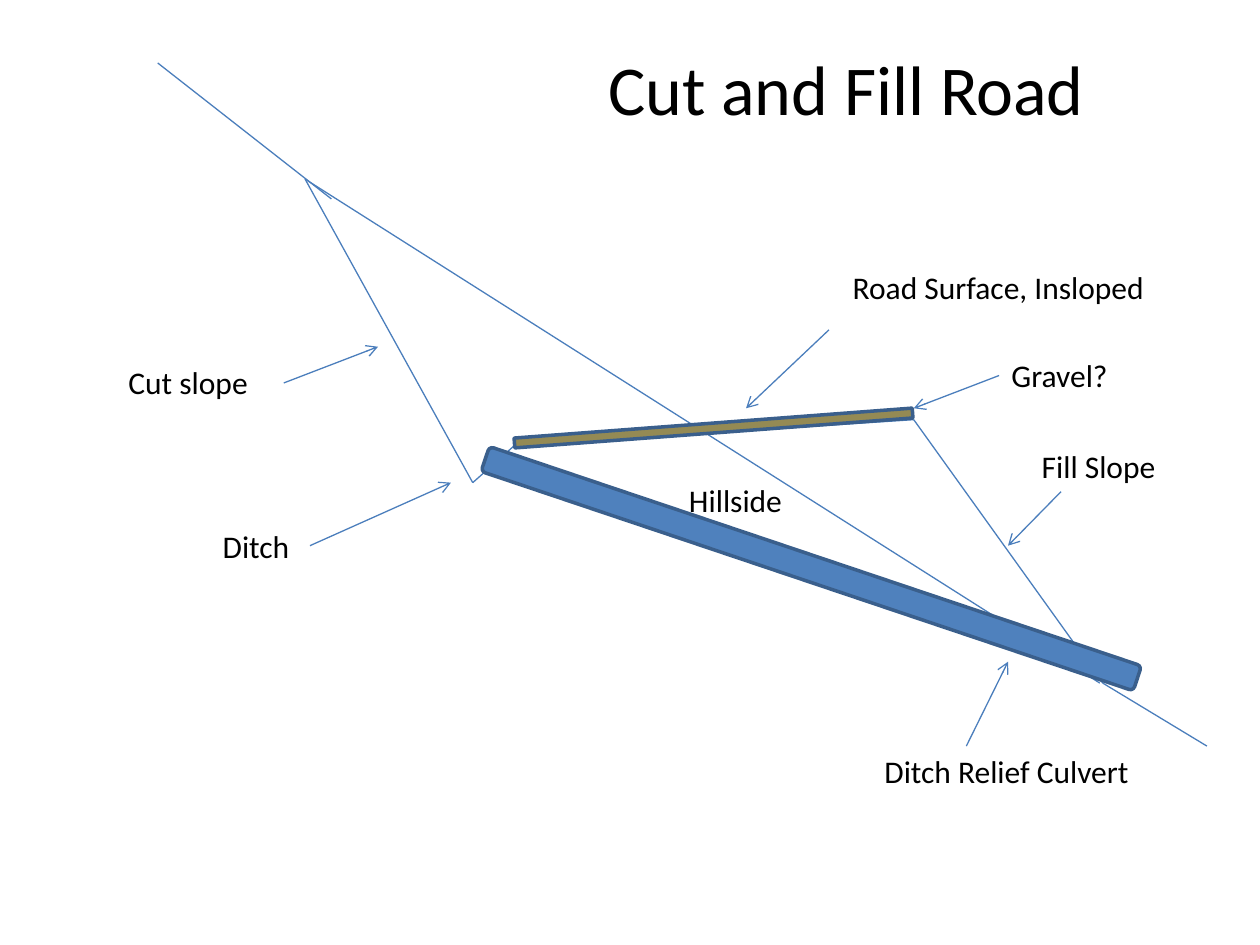
import itertools

import lxml.etree
import pptx
import pptx.dml.color
import pptx.enum.shapes
import pptx.enum.text
import pptx.oxml.ns
import pptx.util

Cm = pptx.util.Cm
Pt = pptx.util.Pt
Preset = pptx.enum.shapes.MSO_SHAPE

COLORS = {
    "text": "000000",
    "line": "4B7EBC",
    "outline": "3A5F8C",
    "gravel": "948A54",
    "culvert": "4F81BD",
}


def color(name):
    return pptx.dml.color.RGBColor.from_string(COLORS[name])


def write(frame, text, size=18, font="Calibri", ink="text"):
    """Put one line of formatted text in a text frame."""
    frame.word_wrap = False
    frame.auto_size = pptx.enum.text.MSO_AUTO_SIZE.SHAPE_TO_FIT_TEXT
    run = frame.paragraphs[0].add_run()
    run.text = text
    run.font.size = Pt(size)
    run.font.name = font
    run.font.color.rgb = color(ink)


class Diagram:
    """Style and current slide of the road section."""

    line_width = Pt(0.75)
    outline_width = Pt(2)
    label_height = 1.02

    def __init__(self, slide):
        self.slide = slide

    def label(self, text, left, top, width, height=label_height, **style):
        box = self.slide.shapes.add_textbox(Cm(left), Cm(top), Cm(width), Cm(height))
        write(box.text_frame, text, **style)
        return box

    def line(self, start, end):
        segment = self.slide.shapes.add_connector(
            pptx.enum.shapes.MSO_CONNECTOR.STRAIGHT, *map(Cm, start + end))
        segment.line.color.rgb = color("line")
        segment.line.width = self.line_width
        lxml.etree.SubElement(segment._element.spPr, pptx.oxml.ns.qn("a:effectLst"))
        return segment

    def arrow(self, start, end):
        pointer = self.line(start, end)
        lxml.etree.SubElement(pointer.line._get_or_add_ln(),
                              pptx.oxml.ns.qn("a:tailEnd"), type="arrow")
        return pointer

    def bar(self, preset, left, top, width, height, rotation, fill):
        shape = self.slide.shapes.add_shape(
            preset, Cm(left), Cm(top), Cm(width), Cm(height))
        shape.rotation = rotation
        shape.shadow.inherit = False
        shape.fill.solid()
        shape.fill.fore_color.rgb = color(fill)
        shape.line.color.rgb = color("outline")
        shape.line.width = self.outline_width


def main():
    deck = pptx.Presentation()
    deck.slide_width, deck.slide_height = Cm(25.4), Cm(19.05)
    diagram = Diagram(deck.slides.add_slide(deck.slide_layouts[6]))

    diagram.label("Cut and Fill Road", 12.01, 0.79, 10.19, 1.96, size=40)

    # Ground profile: cut slope, ditch, road, fill slope, lower hillside
    cut_top, fill_toe = (6.15, 3.61), (22.23, 13.77)
    profile = [cut_top, (9.53, 9.73), (10.36, 8.99), (18.42, 8.46),
               fill_toe, (24.33, 15.04)]
    for start, end in itertools.pairwise(profile):
        diagram.line(start, end)

    # Hillside before the road was built
    diagram.line((6.68, 4.01), (3.18, 1.27))
    diagram.line(cut_top, (22.17, 13.77))
    diagram.label("Hillside", 13.64, 9.58, 2.41)

    # Gravel surface and culvert
    diagram.bar(Preset.RECTANGLE, 10.36, 8.53, 8.05, 0.2, 355.7, "gravel")
    diagram.bar(Preset.ROUNDED_RECTANGLE, 9.42, 11.2, 13.87, 0.53, 18.6, "culvert")

    # Callouts: text, left, top, width, arrow start, arrow end, joined side
    callouts = [
        ("Cut slope", 2.34, 7.19, 2.95, (5.72, 7.72), (7.62, 6.99), None),
        ("Ditch", 4.24, 10.49, 2.01, (6.25, 11), (9.09, 9.73), 3),
        ("Road Surface, Insloped", 16.94, 5.28, 6.45, (16.71, 6.65), (15.04, 8.23), None),
        ("Gravel?", 20.14, 7.06, 2.46, (20.14, 7.57), (18.42, 8.23), 1),
        ("Fill Slope", 20.75, 8.89, 2.84, (21.39, 9.91), (20.32, 11), None),
        ("Ditch Relief Culvert", 17.58, 15.04, 5.49, (19.48, 15.04), (20.32, 13.34), None),
    ]
    for text, left, top, width, start, end, side in callouts:
        name = diagram.label(text, left, top, width)
        pointer = diagram.arrow(start, end)
        if side is not None:
            pointer.begin_connect(name, side)

    deck.save("out.pptx")


if __name__ == "__main__":
    main()
